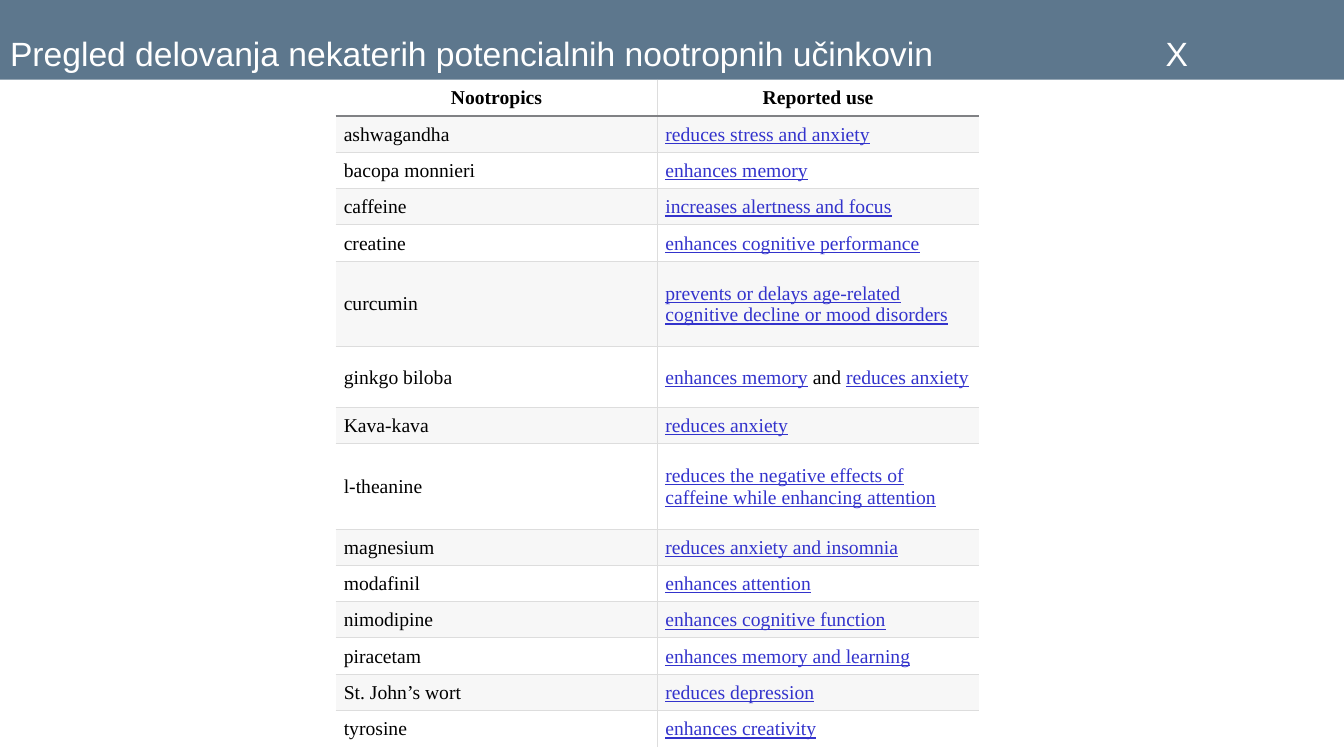
import pptx
import pptx.util
import pptx.dml.color
import pptx.enum.shapes
import pptx.enum.text
import pptx.oxml.ns
from lxml import etree
from pptx.util import Inches

COLORS = {
    "band": "5D778D", "white": "FFFFFF", "text": "000000", "link": "3333CC",
    "stripe": "F7F7F7", "grid": "DDDDDD", "header_rule": "808184",
}
HEADERS = ("Nootropics", "Reported use")
USES = [
    ("ashwagandha", "reduces stress and anxiety", 0.36),
    ("bacopa monnieri", "enhances memory", 0.36),
    ("caffeine", "increases alertness and focus", 0.36),
    ("creatine", "enhances cognitive performance", 0.36),
    ("curcumin", "prevents or delays age-related cognitive decline or mood disorders", 0.85),
    ("ginkgo biloba", "enhances memory| and |reduces anxiety", 0.6),
    ("Kava-kava", "reduces anxiety", 0.36),
    ("l-theanine", "reduces the negative effects of caffeine while enhancing attention", 0.85),
    ("magnesium", "reduces anxiety and insomnia", 0.36),
    ("modafinil", "enhances attention", 0.36),
    ("nimodipine", "enhances cognitive function", 0.36),
    ("piracetam", "enhances memory and learning", 0.36),
    ("St. John’s wort", "reduces depression", 0.36),
    ("tyrosine", "enhances creativity", 0.36),
]


def rgb(name):
    return pptx.dml.color.RGBColor.from_string(COLORS[name])


def add_border(cell, side, color, points):
    properties = cell._tc.get_or_add_tcPr()
    line = etree.SubElement(properties, pptx.oxml.ns.qn(f"a:ln{side}"))
    if color is None:
        etree.SubElement(line, pptx.oxml.ns.qn("a:noFill"))
        return
    line.set("w", str(pptx.util.Pt(points)))
    fill = etree.SubElement(line, pptx.oxml.ns.qn("a:solidFill"))
    etree.SubElement(fill, pptx.oxml.ns.qn("a:srgbClr"), val=COLORS[color])


deck = pptx.Presentation()
deck.slide_width = Inches(13.33)
deck.slide_height = Inches(7.5)
slide = deck.slides.add_slide(deck.slide_layouts[5])

band = slide.shapes.add_shape(
    pptx.enum.shapes.MSO_SHAPE.RECTANGLE, 0, 0, Inches(13.33), Inches(0.79))
band.shadow.inherit = False
band.fill.solid()
band.fill.fore_color.rgb = rgb("band")
band.line.fill.background()
slide.shapes._spTree.insert(2, band._element)

title = slide.shapes.title
title.left, title.top = Inches(0), Inches(0.08)
title.width, title.height = Inches(13.33), Inches(0.7)
title.text_frame.text = "Pregled delovanja nekaterih potencialnih nootropnih učinkovin\tX"
title.text_frame.auto_size = pptx.enum.text.MSO_AUTO_SIZE.NONE
title.text_frame.vertical_anchor = pptx.enum.text.MSO_ANCHOR.BOTTOM
heading = title.text_frame.paragraphs[0]
heading.alignment = pptx.enum.text.PP_ALIGN.LEFT
tabs = etree.SubElement(heading._p.get_or_add_pPr(), pptx.oxml.ns.qn("a:tabLst"))
etree.SubElement(tabs, pptx.oxml.ns.qn("a:tab"), pos=str(Inches(11.46)), algn="l")
heading.font.name = "Arial"
heading.font.size = pptx.util.Pt(24)
heading.font.color.rgb = rgb("white")

row_heights = [0.36] + [height for _, _, height in USES]
table = slide.shapes.add_table(
    len(row_heights), 2, Inches(3.33), Inches(0.79),
    Inches(6.38), Inches(sum(row_heights))).table
table.first_row = False
table.horz_banding = False
for column in table.columns:
    column.width = Inches(3.19)

last_row = len(USES)
for row, entry in enumerate([HEADERS] + [use[:2] for use in USES]):
    table.rows[row].height = Inches(row_heights[row])
    for column, text in enumerate(entry):
        cell = table.cell(row, column)
        cell.vertical_anchor = pptx.enum.text.MSO_ANCHOR.MIDDLE
        cell.margin_left = cell.margin_right = Inches(0.08)
        cell.margin_top = Inches(0.06)
        cell.margin_bottom = Inches(0.05 if row else 0.06)

        top = None if row == 0 else "header_rule" if row == 1 else "grid"
        bottom = "header_rule" if row == 0 else None if row == last_row else "grid"
        add_border(cell, "L", "grid" if column == 1 else None, 0.75)
        add_border(cell, "R", "grid" if column == 0 else None, 0.75)
        add_border(cell, "T", top, 1.5 if row == 1 else 0.75)
        add_border(cell, "B", bottom, 1.5 if row == 0 else 0.75)

        if row % 2:
            cell.fill.solid()
            cell.fill.fore_color.rgb = rgb("stripe")
        else:
            cell.fill.background()

        paragraph = cell.text_frame.paragraphs[0]
        paragraph.font.name = "Times New Roman"
        paragraph.font.size = pptx.util.Pt(14)
        paragraph.font.bold = row == 0
        paragraph.font.color.rgb = rgb("text")
        if row == 0:
            paragraph.alignment = pptx.enum.text.PP_ALIGN.CENTER
        for index, phrase in enumerate(text.split("|")):
            run = paragraph.add_run()
            run.text = phrase
            if row and column == 1 and index % 2 == 0:
                run.font.color.rgb = rgb("link")
                run.font.underline = True

deck.save("out.pptx")
